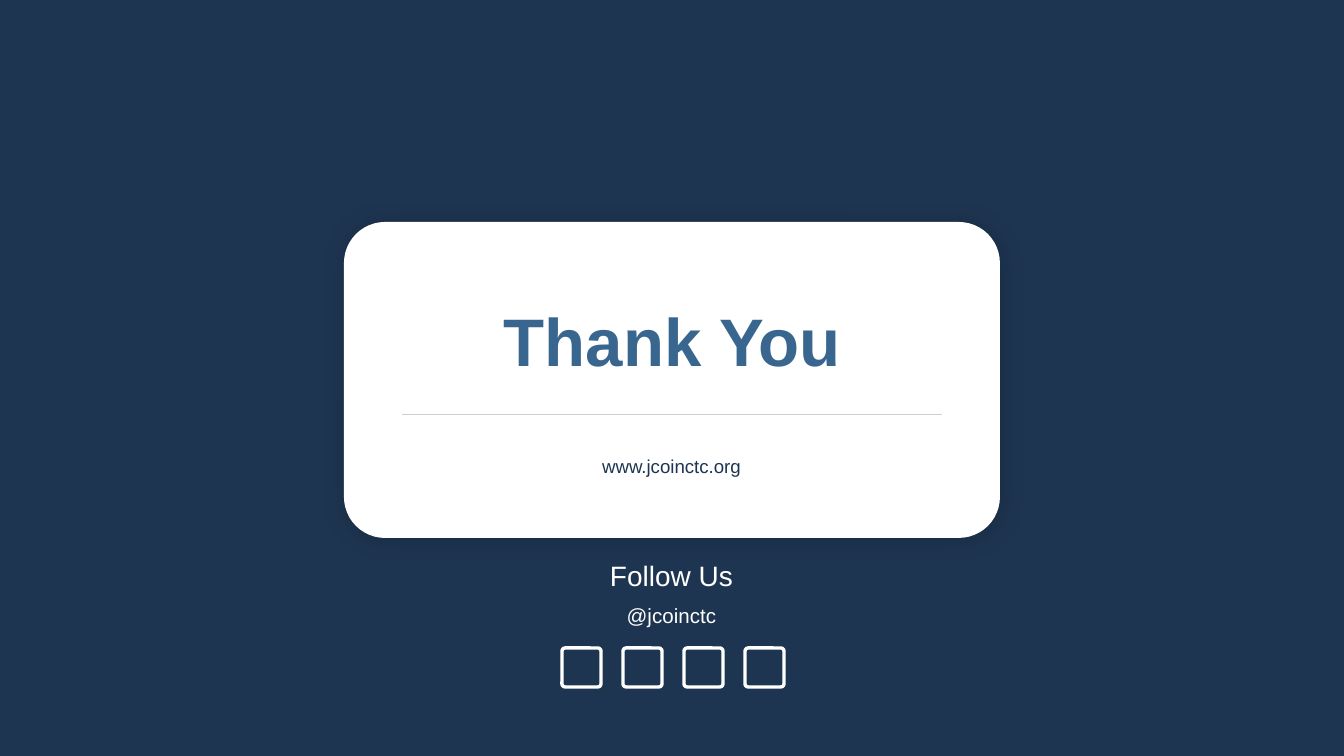
from lxml import etree
from pptx import Presentation
from pptx.dml.color import RGBColor
from pptx.enum.shapes import MSO_CONNECTOR as Link, MSO_SHAPE as Kind
from pptx.enum.text import MSO_ANCHOR as Anchor, MSO_AUTO_SIZE as Auto, PP_ALIGN as Align
from pptx.oxml import parse_xml
from pptx.oxml.ns import nsdecls, qn
from pptx.util import Pt

SCALE = 914400 / 134.4  # EMU in one px
NAVY, BLUE, WHITE, GREY = "1E3551", "38668E", "FFFFFF", "D0CECE"


def px(*vals):
    return [round(v * SCALE) for v in vals]


def color(code):
    return RGBColor.from_string(code)


class Page:
    font = "Arial"

    def __init__(self, deck, back):
        self.slide = deck.slides.add_slide(deck.slide_layouts[5])
        self.shapes = self.slide.shapes
        fill = self.slide.background.fill
        fill.solid()
        fill.fore_color.rgb = color(back)

    def block(self, box, radius):
        shape = self.shapes.add_shape(Kind.ROUNDED_RECTANGLE, *px(*box))
        shape.adjustments[0] = radius
        shape.shadow.inherit = False
        return shape

    def card(self, box, radius, fill):
        shape = self.block(box, radius)
        shape.fill.solid()
        shape.fill.fore_color.rgb = color(fill)
        shape.line.fill.background()
        glow = parse_xml(
            f'<a:outerShdw {nsdecls("a")} blurRad="{Pt(13.4)}" dist="{Pt(1.5)}" '
            'dir="2700000" algn="ctr" rotWithShape="0">'
            '<a:srgbClr val="000000"><a:alpha val="20000"/></a:srgbClr></a:outerShdw>')
        shape._element.spPr.find(qn("a:effectLst")).append(glow)

    def frame(self, box, radius, line, width):
        shape = self.block(box, radius)
        shape.fill.background()
        shape.line.color.rgb = color(line)
        shape.line.width = Pt(width)

    def rule(self, left, right, top, line, width):
        rule = self.shapes.add_connector(Link.STRAIGHT, *px(left, top, right, top))
        rule.line.color.rgb = color(line)
        rule.line.width = Pt(width)
        etree.SubElement(rule._element.spPr, qn("a:effectLst"))

    def label(self, shape, rows, ink, bold=False, anchor=Anchor.MIDDLE, pad=3, gap=0, lead=1):
        frame = shape.text_frame
        frame.word_wrap = True
        frame.auto_size = Auto.NONE
        frame.vertical_anchor = anchor
        frame.margin_left = frame.margin_right = px(7)[0]
        frame.margin_top = frame.margin_bottom = px(pad)[0]
        for i, (words, size) in enumerate(rows):
            para = frame.add_paragraph() if i else frame.paragraphs[0]
            para.text = words
            para.alignment = Align.CENTER
            para.line_spacing = lead
            para.space_before = Pt(gap if i else 0)
            font = para.font
            font.name, font.size, font.bold = self.font, Pt(size), bold
            font.color.rgb = color(ink)

    def title(self, box, words, size, ink):
        shape = self.shapes.title
        shape.left, shape.top, shape.width, shape.height = px(*box)
        # Bring the title in front of the card
        self.shapes._spTree.append(shape._element)
        self.label(shape, [(words, size)], ink, bold=True)

    def text(self, box, rows, ink, **style):
        self.label(self.shapes.add_textbox(*px(*box)), rows, ink, **style)


def main():
    deck = Presentation()
    deck.slide_width, deck.slide_height = px(1344, 756)
    page = Page(deck, NAVY)

    # Card with thanks and web address
    page.card((344, 222, 656, 316), 0.13, WHITE)
    page.text((490, 450, 363, 30), [("www.jcoinctc.org", 10)], NAVY,
              anchor=Anchor.TOP, lead=1.1)
    page.rule(402, 942, 414, GREY, 0.37)
    page.title((407, 270, 531, 140), "Thank You", 36, BLUE)

    # Social handle
    page.text((490, 550, 363, 86), [("Follow Us", 15), ("@jcoinctc", 11)], WHITE,
              pad=7, gap=6)

    # Row of plain icon frames
    for i in range(4):
        page.frame((562 + 61 * i, 648, 39, 39), 0.08, WHITE, 1.8)

    deck.save("out.pptx")


if __name__ == "__main__":
    main()
